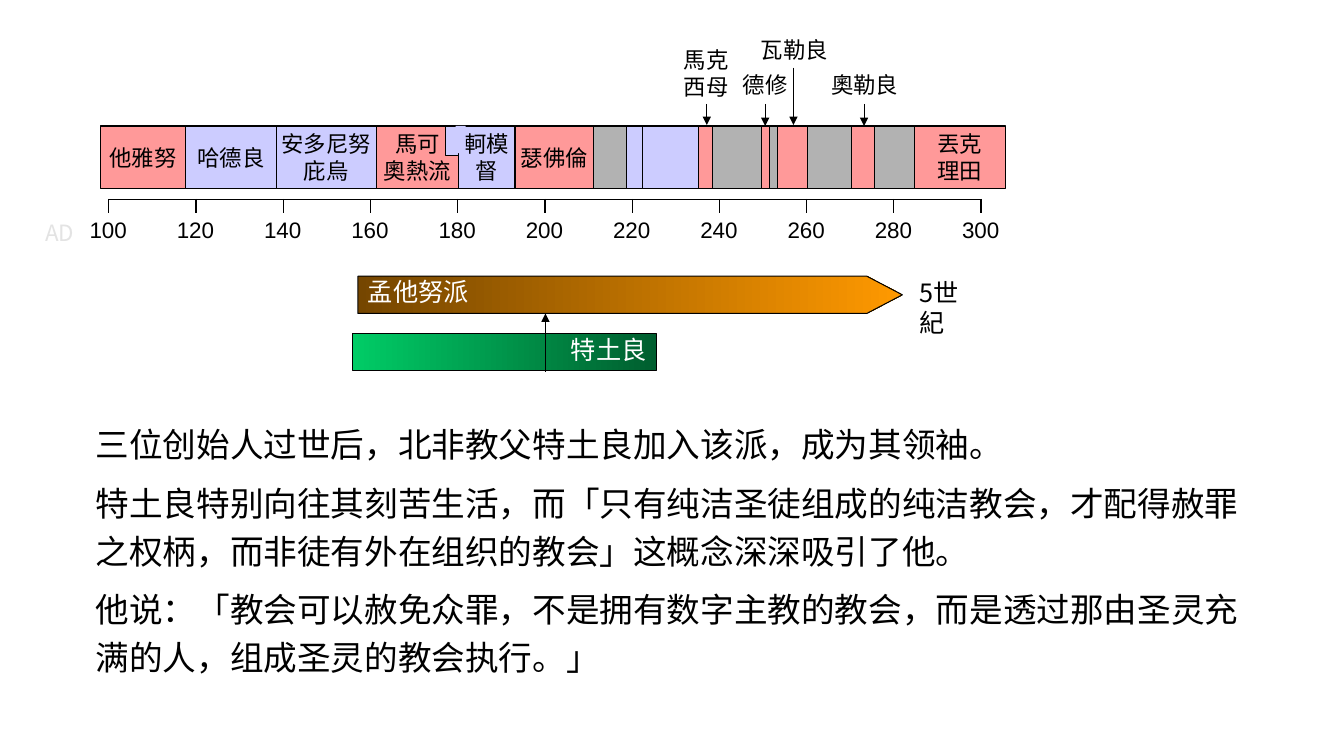
from lxml import etree
from pptx import Presentation
from pptx.dml.color import RGBColor
from pptx.enum.shapes import MSO_CONNECTOR, MSO_SHAPE
from pptx.enum.text import MSO_ANCHOR, PP_ALIGN
from pptx.oxml import parse_xml
from pptx.oxml.ns import nsdecls, qn
from pptx.util import Inches, Pt

rgb = RGBColor.from_string
BLACK, WHITE = "000000", "FFFFFF"
RED, BLUE, GRAY = "FF9999", "CCCCFF", "B2B2B2"
CJK = "Noto Sans CJK SC"

presentation = Presentation()
presentation.slide_width = Inches(13.33)
presentation.slide_height = Inches(7.5)
slide = presentation.slides.add_slide(presentation.slide_layouts[6])
shapes = slide.shapes


def write_text(frame, text, size=16, font="Calibri", color=BLACK, align=PP_ALIGN.CENTER, wrap=True):
    frame.text = text
    frame.word_wrap = wrap
    for paragraph in frame.paragraphs:
        paragraph.alignment = align
        paragraph.font.size = Pt(size)
        paragraph.font.name = font
        paragraph.font.color.rgb = rgb(color)


def add_box(kind, left, top, width, height, colors):
    shape = shapes.add_shape(kind, Inches(left), Inches(top), Inches(width), Inches(height))
    shape.shadow.inherit = False
    if len(colors) == 1:
        shape.fill.solid()
        shape.fill.fore_color.rgb = rgb(colors[0])
    else:
        shape.fill.gradient()
        shape.fill.gradient_angle = 0
        for stop, color, position in zip(shape.fill.gradient_stops, colors, (0, 1)):
            stop.color.rgb = rgb(color)
            stop.position = position
    shape.line.color.rgb = rgb(BLACK)
    shape.line.width = Pt(0.75)
    return shape


years = [str(year) for year in range(100, 301, 20)]
axis_tables = [
    (1.08, 1.98, 8.65, 0.4, [""] * 10, BLACK),
    (0.64, 2.12, 9.52, 0.37, years, WHITE),
]
for left, top, width, height, labels, border in axis_tables:
    table = shapes.add_table(
        1, len(labels), Inches(left), Inches(top), Inches(width), Inches(height)
    ).table
    table.first_row = False
    table.horz_banding = False
    for column, label in enumerate(labels):
        cell = table.cell(0, column)
        properties = cell._tc.get_or_add_tcPr()
        for side in ("lnL", "lnR", "lnT", "lnB"):
            properties.append(parse_xml(
                f'<a:{side} {nsdecls("a")} w="12700"><a:solidFill>'
                f'<a:srgbClr val="{border}"/></a:solidFill></a:{side}>'
            ))
        cell.fill.solid()
        cell.fill.fore_color.rgb = rgb(WHITE)
        write_text(cell.text_frame, label, font="Arial")

reigns = [
    (1.84, RED, "他雅努"), (2.74, BLUE, "哈德良"), (3.73, BLUE, "安多尼努\n庇烏"),
    (4.55, RED, "馬可\n奧熱流"), (5.1, BLUE, "軻模\n督"), (5.11, GRAY, ""),
    (5.89, RED, "瑟佛倫"), (6.21, GRAY, ""), (6.37, BLUE, ""), (6.93, BLUE, ""),
    (7.07, RED, ""), (7.55, GRAY, ""), (7.63, RED, ""), (7.71, GRAY, ""),
    (8.01, RED, ""), (8.45, GRAY, ""), (8.67, RED, ""), (9.07, GRAY, ""),
    (9.97, RED, "丟克\n理田"),
]
start = 1
for end, color, name in reigns:
    reign = add_box(MSO_SHAPE.RECTANGLE, start, 1.25, end - start, 0.62, [color])
    if name:
        reign.text_frame.vertical_anchor = MSO_ANCHOR.MIDDLE
        write_text(reign.text_frame, name, wrap=False)
    start = end

add_box(MSO_SHAPE.RECTANGLE, 4.42, 1.25, 0.13, 0.29, [BLUE])
joint = add_box(MSO_SHAPE.RECTANGLE, 4.52, 1.25, 0.1, 0.27, [BLUE])
joint.line.fill.background()

movement = add_box(MSO_SHAPE.PENTAGON, 3.55, 2.74, 5.4, 0.37, ["754600", "FF9900"])
movement.adjustments[0] = 0.953
leader = add_box(MSO_SHAPE.RECTANGLE, 3.5, 3.31, 3.01, 0.37, ["00CC66", "005E2F"])
for bar, name, align in [
    (movement, "孟他努派", PP_ALIGN.LEFT),
    (leader, "特土良", PP_ALIGN.RIGHT),
]:
    bar.text_frame.vertical_anchor = MSO_ANCHOR.TOP
    write_text(bar.text_frame, name, 18, color=WHITE, align=align, wrap=False)
    bar.text_frame.paragraphs[0].line_spacing = 0.85

arrows = [
    (7.01, 1.03, 1.24), (7.59, 1.03, 1.25), (7.87, 0.67, 1.24),
    (8.57, 1.03, 1.25), (5.41, 3.69, 3.11),
]
for x, tail, tip in arrows:
    arrow = shapes.add_connector(
        MSO_CONNECTOR.STRAIGHT, Inches(x), Inches(tail), Inches(x), Inches(tip)
    )
    arrow.line.color.rgb = rgb(BLACK)
    arrow.line.width = Pt(0.75)
    etree.SubElement(arrow.line._get_or_add_ln(), qn("a:tailEnd"), type="triangle")
    etree.SubElement(arrow._element.spPr, qn("a:effectLst"))

captions = [
    (6.66, 0.41, 0.69, 0.64, "馬克\n西母", 16, "Calibri", BLACK, PP_ALIGN.CENTER),
    (7.24, 0.66, 0.7, 0.37, "德修", 16, "Calibri", BLACK, PP_ALIGN.CENTER),
    (8.14, 0.66, 0.87, 0.37, "奧勒良", 16, "Calibri", BLACK, PP_ALIGN.CENTER),
    (7.39, 0.31, 0.98, 0.37, "瓦勒良", 16, "Calibri", BLACK, PP_ALIGN.CENTER),
    (9.02, 2.7, 0.83, 0.4, "5世紀", 18, CJK, BLACK, PP_ALIGN.LEFT),
    (0.35, 2.12, 0.6, 0.37, "AD", 16, CJK, "E3E3E3", PP_ALIGN.LEFT),
]
for left, top, width, height, text, size, font, color, align in captions:
    caption = shapes.add_textbox(Inches(left), Inches(top), Inches(width), Inches(height))
    write_text(caption.text_frame, text, size, font, color, align)

story = [
    "三位创始人过世后，北非教父特土良加入该派，成为其领袖。",
    "特土良特别向往其刻苦生活，而「只有纯洁圣徒组成的纯洁教会，才配得赦罪之权柄，而非徒有外在组织的教会」这概念深深吸引了他。",
    "他说：「教会可以赦免众罪，不是拥有数字主教的教会，而是透过那由圣灵充满的人，组成圣灵的教会执行。」",
]
body = shapes.add_textbox(Inches(0.85), Inches(4.08), Inches(11.64), Inches(2.7))
write_text(body.text_frame, "\n".join(story), 24, CJK, align=PP_ALIGN.LEFT)
for paragraph in body.text_frame.paragraphs:
    paragraph.line_spacing = 1.2
    paragraph.space_after = Pt(7)

presentation.save("out.pptx")
